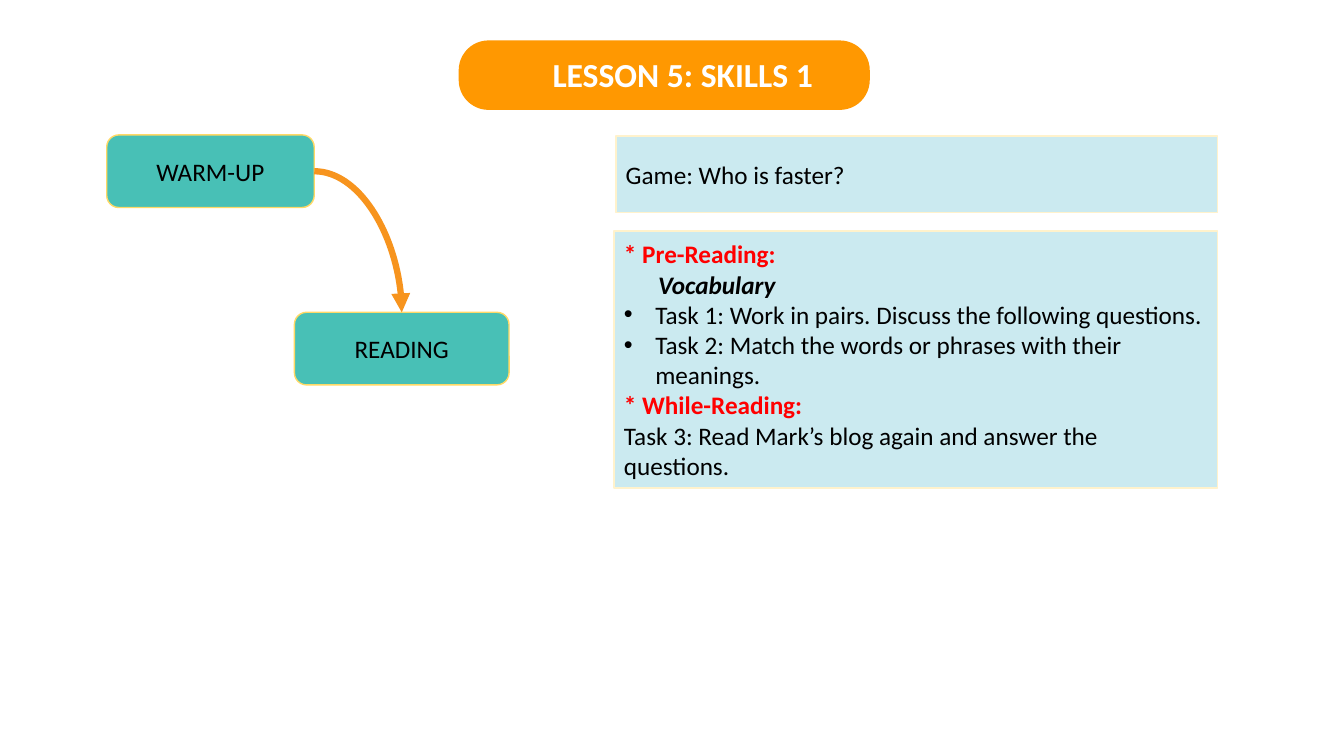
from lxml.etree import SubElement
from pptx import Presentation
from pptx.dml.color import RGBColor
from pptx.enum.shapes import MSO_CONNECTOR, MSO_SHAPE
from pptx.enum.text import MSO_ANCHOR, MSO_AUTO_SIZE, PP_ALIGN
from pptx.oxml.ns import qn
from pptx.util import Cm, Pt

TEAL = RGBColor(0x48, 0xC0, 0xB6)
GOLD = RGBColor(0xFF, 0xD9, 0x66)
PALE_BLUE = RGBColor(0xCB, 0xEA, 0xF0)
CREAM = RGBColor(0xFF, 0xF2, 0xCC)
ORANGE = RGBColor(0xFF, 0x98, 0x01)
ARROW = RGBColor(0xF7, 0x94, 0x1E)
RED = RGBColor(0xFF, 0x00, 0x00)
BLACK = RGBColor(0x00, 0x00, 0x00)
WHITE = RGBColor(0xFF, 0xFF, 0xFF)


def add_run(p, text, color=BLACK, size=18, bold=False, italic=False):
    r = p.add_run()
    r.text = text
    r.font.name = "Calibri"
    r.font.size = Pt(size)
    r.font.bold = bold
    r.font.italic = italic
    r.font.color.rgb = color


def style_box(sp, fill, line):
    sp.fill.solid()
    sp.fill.fore_color.rgb = fill
    sp.line.color.rgb = line
    sp.line.width = Pt(1)
    sp.text_frame.word_wrap = True
    sp.text_frame.vertical_anchor = MSO_ANCHOR.MIDDLE


prs = Presentation()
prs.slide_width, prs.slide_height = Cm(33.87), Cm(19.05)
slide = prs.slides.add_slide(prs.slide_layouts[1])
shapes = slide.shapes
title, body = shapes.title, slide.placeholders[1]

# Lesson stages
stages = []
for name, left, top, width in [("WARM-UP", 2.69, 3.4, 5.23),
                               ("READING", 7.42, 7.87, 5.41)]:
    sp = shapes.add_shape(MSO_SHAPE.ROUNDED_RECTANGLE,
                          Cm(left), Cm(top), Cm(width), Cm(1.83))
    sp.shadow.inherit = False
    style_box(sp, TEAL, GOLD)
    p = sp.text_frame.paragraphs[0]
    p.alignment = PP_ALIGN.CENTER
    add_run(p, name)
    stages.append(sp)

# Curved arrow from warm-up to reading
warm_up, reading = stages
arrow = shapes.add_connector(MSO_CONNECTOR.CURVE, 0, 0, 0, 0)
arrow.begin_connect(warm_up, 3)
arrow.end_connect(reading, 0)
arrow.line.color.rgb = ARROW
arrow.line.width = Pt(4.5)
sp_pr = arrow._element.spPr
sp_pr.find(qn("a:prstGeom")).set("prst", "curvedConnector2")
SubElement(sp_pr.find(qn("a:ln")), qn("a:tailEnd"), type="triangle")
SubElement(sp_pr, qn("a:effectLst"))

# Warm-up activity
game = shapes.add_shape(MSO_SHAPE.RECTANGLE,
                        Cm(15.52), Cm(3.43), Cm(15.16), Cm(1.93))
game.shadow.inherit = False
style_box(game, PALE_BLUE, CREAM)
p = game.text_frame.paragraphs[0]
p.alignment = PP_ALIGN.LEFT
add_run(p, "Game: Who is faster?")

# Reading activities: text, left margin in cm, bullet, run format
heading = {"color": RED, "bold": True}
activities = [
    ("* Pre-Reading:", 0, False, heading),
    ("Vocabulary", 0.86, False, {"bold": True, "italic": True}),
    ("Task 1: Work in pairs. Discuss the following questions.", 0.79, True, {}),
    ("Task 2: Match the words or phrases with their meanings.", 0.79, True, {}),
    ("* While-Reading:", 0, False, heading),
    ("Task 3: Read Mark’s blog again and answer the questions.", 0, False, {}),
]
body.left, body.top = Cm(15.47), Cm(5.82)
body.width, body.height = Cm(15.21), Cm(6.48)
style_box(body, PALE_BLUE, CREAM)
tf = body.text_frame
tf.auto_size = MSO_AUTO_SIZE.NONE
for i, (text, margin, bullet, style) in enumerate(activities):
    p = tf.add_paragraph() if i else tf.paragraphs[0]
    p.space_before = Pt(0)
    p_pr = p._p.get_or_add_pPr()
    p_pr.set("marL", str(Cm(margin)))
    p_pr.set("indent", str(-Cm(margin) if bullet else 0))
    if bullet:
        SubElement(p_pr, qn("a:buFont"), typeface="Arial")
        SubElement(p_pr, qn("a:buChar"), char="•")
    else:
        SubElement(p_pr, qn("a:buNone"))
    add_run(p, text, **style)

# Title banner, with the title on top
banner = shapes.add_shape(MSO_SHAPE.ROUNDED_RECTANGLE,
                          Cm(11.56), Cm(1.02), Cm(10.36), Cm(1.75))
banner.adjustments[0] = 0.43
banner.shadow.inherit = False
banner.fill.solid()
banner.fill.fore_color.rgb = ORANGE
banner.line.fill.background()

title.left, title.top, title.width, title.height = (
    Cm(13.67), Cm(1.24), Cm(8.03), Cm(1.27))
tf = title.text_frame
tf.auto_size = MSO_AUTO_SIZE.NONE
tf.vertical_anchor = MSO_ANCHOR.MIDDLE
p = tf.paragraphs[0]
p.alignment = PP_ALIGN.LEFT
add_run(p, "LESSON 5: SKILLS 1", WHITE, 24, bold=True)
banner._element.addnext(title._element)

prs.save("out.pptx")
